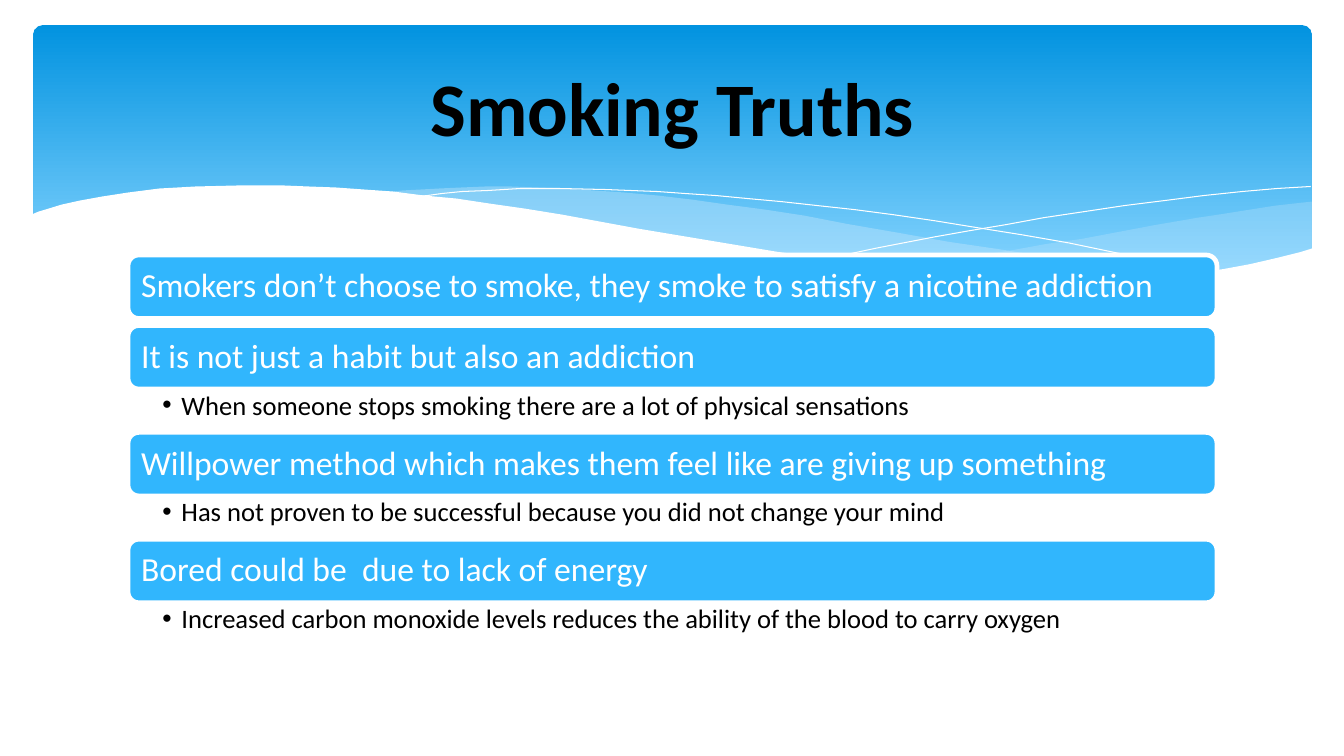
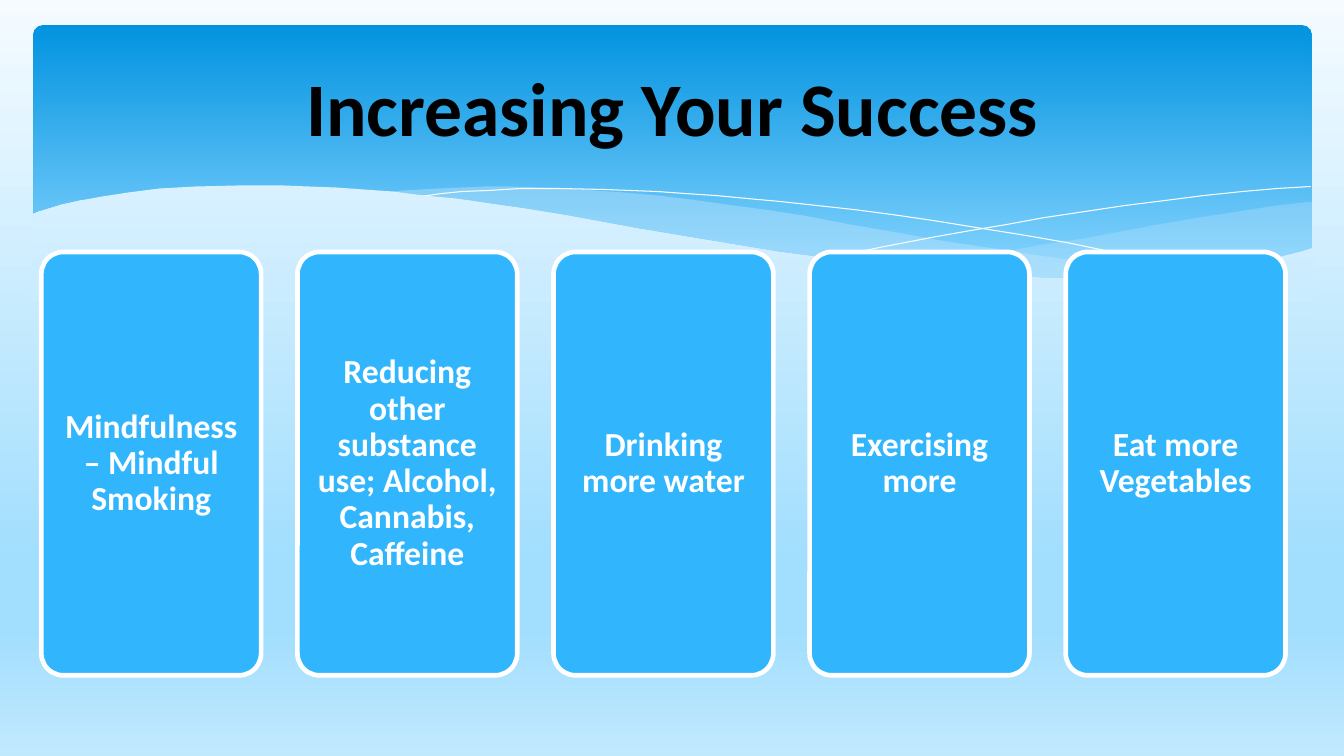
from lxml.etree import SubElement
from pptx import Presentation
from pptx.dml.color import RGBColor
from pptx.enum.shapes import MSO_SHAPE
from pptx.enum.text import MSO_ANCHOR, PP_ALIGN
from pptx.oxml.ns import qn
from pptx.util import Inches, Pt

FONT = "Calibri"
WHITE, BLACK, BLUE, PALE = "FFFFFF", "000000", "31B6FD", "C6E7FC"
BAND = [(0, "0293E0"), (90, "83D3FE")]
SKY = [(0, "F5FBFF"), (74, "A2DEFE"), (83, "A2DEFE"), (100, "C1E9FE")]
SKY_BEHIND_WAVE = [(0, "D9F1FF"), (100, "C4EAFE")]

RIGHT_SWELL = [
    (13.01, 2), (12.83, 2.02), (12.65, 2.04), (12.46, 2.07), (12.27, 2.1),
    (12.08, 2.13), (11.88, 2.16), (11.47, 2.23), (11.1, 2.3), (10.73, 2.37),
    (10.38, 2.42), (10.05, 2.48), (9.72, 2.53), (9.41, 2.57), (9.11, 2.62),
    (8.82, 2.65), (9.21, 2.69), (9.58, 2.72), (9.93, 2.75), (10.25, 2.77),
    (10.71, 2.78), (11.13, 2.77), (11.38, 2.76), (11.63, 2.74), (11.86, 2.72),
    (12.07, 2.69), (12.28, 2.65), (12.47, 2.62), (12.66, 2.57), (12.84, 2.52),
    (13.01, 2.47)]
MIDDLE_SWELL = [
    (11.9, 2.73), (11.54, 2.69), (11.16, 2.65), (10.76, 2.6), (10.34, 2.54),
    (9.89, 2.47), (9.41, 2.4), (8.91, 2.31), (8.39, 2.22), (7.98, 2.14),
    (7.59, 2.08), (7.21, 2.03), (6.86, 1.98), (6.52, 1.94), (6.19, 1.91),
    (5.89, 1.89), (5.6, 1.87), (5.32, 1.86), (5.06, 1.85), (4.82, 1.85),
    (4.59, 1.86), (4.37, 1.87), (4.18, 1.88), (3.99, 1.89), (3.82, 1.91),
    (4.31, 1.96), (4.83, 2.03), (5.39, 2.11), (5.99, 2.22), (6.54, 2.32),
    (7.06, 2.4), (7.55, 2.48), (8.02, 2.55), (8.46, 2.61), (8.87, 2.66),
    (9.26, 2.7), (9.63, 2.74), (9.98, 2.76), (10.3, 2.77), (10.61, 2.78),
    (11.18, 2.78), (11.43, 2.77), (11.67, 2.75)]
FALLING_LINE = [
    (4.12, 1.95), (4.24, 1.94), (4.38, 1.92), (4.58, 1.9), (4.84, 1.89),
    (5.16, 1.87), (5.55, 1.87), (6, 1.88), (6.52, 1.9), (6.8, 1.92),
    (7.1, 1.94), (7.42, 1.97), (7.75, 2), (8.11, 2.04), (8.48, 2.08),
    (8.86, 2.13), (9.27, 2.19), (9.7, 2.26), (10.14, 2.33), (10.6, 2.41),
    (11.08, 2.51), (11.58, 2.61), (12.1, 2.72)]
RISING_LINE = [
    (8.18, 2.57), (8.7, 2.46), (9.27, 2.35), (9.61, 2.29), (9.97, 2.23),
    (10.35, 2.16), (10.75, 2.1), (11.15, 2.04), (11.55, 1.99), (11.94, 1.94),
    (12.32, 1.9), (12.67, 1.87), (13, 1.85)]
FRONT_WAVE = [
    (13.03, 2.46), (12.9, 2.5), (12.66, 2.56), (12.4, 2.62), (12.13, 2.67),
    (11.83, 2.71), (11.51, 2.74), (11.16, 2.76), (10.78, 2.77), (10.37, 2.76),
    (9.92, 2.74), (9.44, 2.7), (8.91, 2.65), (8.34, 2.58), (7.72, 2.5),
    (7.06, 2.39), (6.34, 2.27), (5.96, 2.2), (5.58, 2.13), (5.21, 2.07),
    (4.86, 2.02), (4.53, 1.97), (4.21, 1.94), (3.9, 1.9), (3.61, 1.88),
    (3.33, 1.86), (3.06, 1.85), (2.82, 1.84), (2.35, 1.84), (1.94, 1.85),
    (1.58, 1.87), (1.27, 1.91), (1.01, 1.95), (0.79, 1.99), (0.61, 2.03),
    (0.48, 2.07), (0.38, 2.1), (0.31, 2.13), (0.31, 3.29), (13.03, 3.29)]

TRUTHS = [
    ("Smokers don’t choose to smoke, they smoke to satisfy a nicotine addiction", None),
    ("It is not just a habit but also an addiction",
     "When someone stops smoking there are a lot of physical sensations"),
    ("Willpower method which makes them feel like are giving up something",
     "Has not proven to be successful because you did not change your mind"),
    ("Bored could be  due to lack of energy",
     "Increased carbon monoxide levels reduces the ability of the blood to carry oxygen"),
]
TIPS = [
    "Mindfulness – Mindful Smoking",
    "Reducing other substance use; Alcohol, Cannabis, Caffeine",
    "Drinking more water",
    "Exercising more",
    "Eat more Vegetables",
]


def rgb(color):
    """Turn a hex string into a colour."""
    return RGBColor.from_string(color)


def paint(fill, element, color, opacity=100):
    """Fill with one hex colour or with a list of vertical gradient stops."""
    if isinstance(color, str):
        fill.solid()
        fill.fore_color.rgb = rgb(color)
        if opacity < 100:
            clr = next(element.iter(qn("a:srgbClr")))
            SubElement(clr, qn("a:alpha"), val=str(opacity * 1000))
        return
    fill.gradient()
    fill.gradient_angle = 270
    stops = next(element.iter(qn("a:gsLst")))
    for old in list(stops):
        stops.remove(old)
    for position, stop_color in color:
        gs = SubElement(stops, qn("a:gs"), pos=str(position * 1000))
        SubElement(gs, qn("a:srgbClr"), val=stop_color)


def finish(sp, fill=None, opacity=100, line=None, width=0):
    """Set the fill and the outline of a shape and drop its shadow."""
    sp.shadow.inherit = False
    if fill:
        paint(sp.fill, sp.element, fill, opacity)
    else:
        sp.fill.background()
    if line:
        sp.line.color.rgb = rgb(line)
        sp.line.width = Pt(width)
    else:
        sp.line.fill.background()


def write(sp, text, size=24, color=WHITE, bold=False, align=PP_ALIGN.LEFT,
          anchor=MSO_ANCHOR.MIDDLE, insets=(0.1, 0.1, 0.1, 0.1), spacing=0.9,
          bullet_indent=None):
    """Write one formatted paragraph into a shape."""
    tf = sp.text_frame
    tf.word_wrap = True
    tf.vertical_anchor = anchor
    tf.margin_left, tf.margin_top, tf.margin_right, tf.margin_bottom = map(Inches, insets)
    p = tf.paragraphs[0]
    p.alignment = align
    p.line_spacing = spacing
    r = p.add_run()
    r.text = text
    r.font.name, r.font.size, r.font.bold = FONT, Pt(size), bold
    r.font.color.rgb = rgb(color)
    if bullet_indent:
        pPr = p._p.get_or_add_pPr()
        pPr.set("marL", str(Inches(bullet_indent)))
        pPr.set("indent", str(-Inches(bullet_indent)))
        SubElement(pPr, qn("a:buFont"), typeface="Arial")
        SubElement(pPr, qn("a:buChar"), char="•")


def add_round_rect(slide, x, y, w, h, radius, **look):
    """Add a rounded rectangle."""
    sp = slide.shapes.add_shape(MSO_SHAPE.ROUNDED_RECTANGLE, *map(Inches, (x, y, w, h)))
    sp.adjustments[0] = radius
    finish(sp, **look)
    return sp


def add_textbox(slide, x, y, w, h, text, **fmt):
    """Add a text box."""
    write(slide.shapes.add_textbox(*map(Inches, (x, y, w, h))), text, **fmt)


def add_outline(slide, points, close=True, **look):
    """Add a freeform through points given in inches."""
    start, *rest = [(Inches(x), Inches(y)) for x, y in points]
    builder = slide.shapes.build_freeform(*start)
    builder.add_line_segments(rest, close=close)
    finish(builder.convert_to_shape(), **look)


def add_card(slide, x, y, w, h, radius, text, **fmt):
    """Add a blue card with a white border and text."""
    sp = add_round_rect(slide, x, y, w, h, radius, fill=BLUE, line=WHITE, width=3.35)
    write(sp, text, **fmt)


def add_base(prs, title, background, wave):
    """Add a slide with its background, wavy band and title."""
    slide = prs.slides.add_slide(prs.slide_layouts[6])
    paint(slide.background.fill, slide.element, background)
    add_round_rect(slide, 0.33, 0.25, 12.68, 2.7, 0.034, fill=BAND)
    add_outline(slide, RIGHT_SWELL, fill=PALE, opacity=29)
    add_outline(slide, MIDDLE_SWELL, fill=PALE, opacity=40)
    for points in (FALLING_LINE, RISING_LINE):
        add_outline(slide, points, close=False, line=WHITE)
    add_outline(slide, FRONT_WAVE, fill=wave)
    add_textbox(slide, 0.67, 0.37, 12, 1.37, title, size=54, color=BLACK, bold=True,
                align=PP_ALIGN.CENTER, insets=(0.1, 0.05, 0.1, 0.05), spacing=1.0)
    return slide


def add_truths(prs):
    """Build the list of truths with their details."""
    slide = add_base(prs, "Smoking Truths", WHITE, WHITE)
    x, y, w, bar_h, detail_h, gap = 1.27, 2.53, 10.8, 0.63, 0.43, 0.07
    for truth, detail in TRUTHS:
        add_card(slide, x, y, w, bar_h, 0.17, truth)
        y += bar_h
        if detail:
            add_textbox(slide, x, y, w, detail_h, detail, size=19, color=BLACK,
                        anchor=MSO_ANCHOR.TOP, insets=(0.34, 0.03, 0.19, 0.03),
                        bullet_indent=0.19)
            y += detail_h
        else:
            y += gap


def add_tips(prs):
    """Build the row of tip cards."""
    slide = add_base(prs, "Increasing Your Success", SKY, SKY_BEHIND_WAVE)
    left, pitch = 0.41, 2.54
    for i, tip in enumerate(TIPS):
        add_card(slide, left + i * pitch, 2.5, 2.18, 4.2, 0.1, tip,
                 bold=True, align=PP_ALIGN.CENTER)


def main():
    """Build and save the presentation."""
    prs = Presentation()
    prs.slide_width, prs.slide_height = Inches(13.33), Inches(7.5)
    add_truths(prs)
    add_tips(prs)
    prs.save("out.pptx")


if __name__ == "__main__":
    main()
